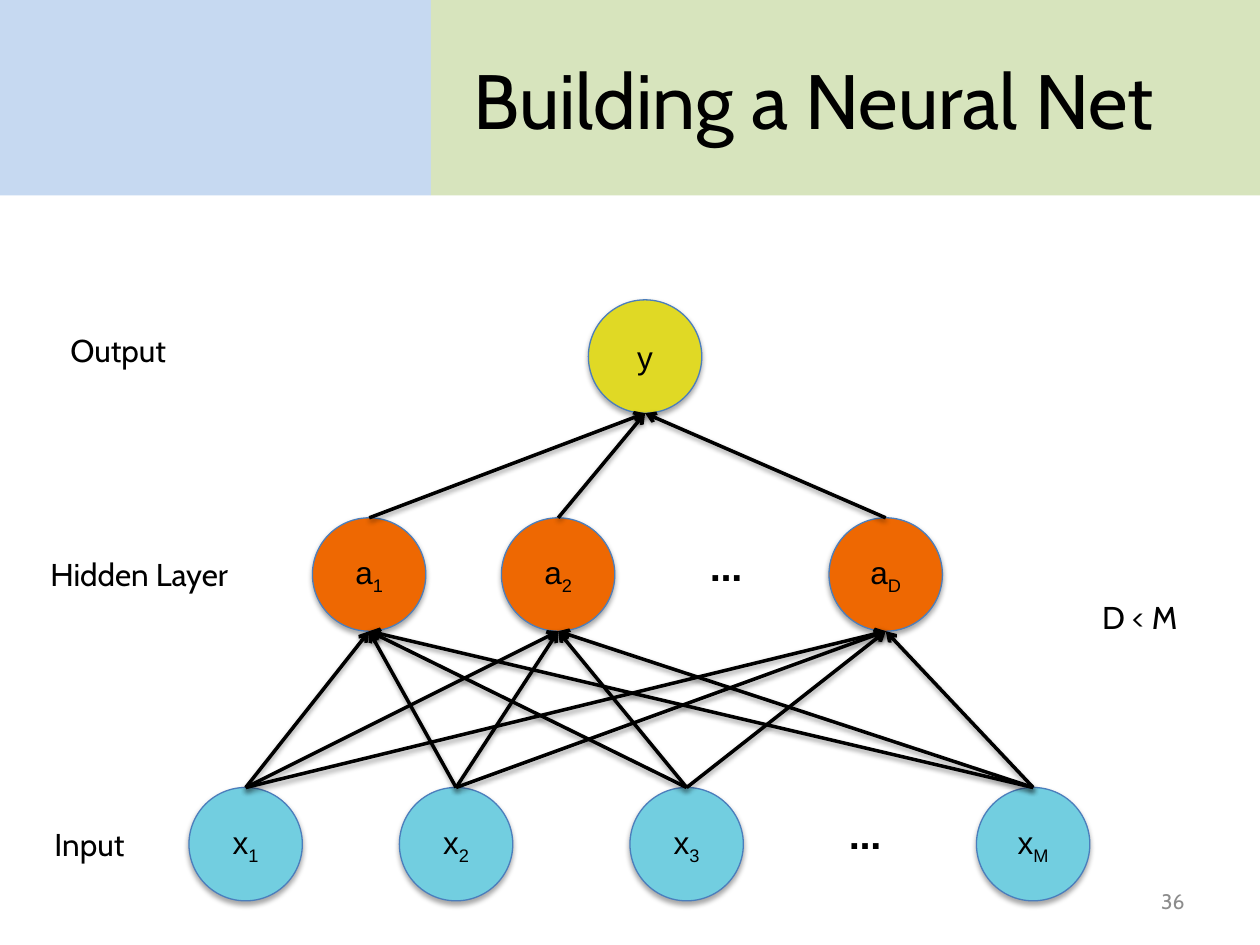
import pptx
import pptx.util
import pptx.dml.color
import pptx.enum.shapes
import pptx.enum.text
import pptx.oxml
from dataclasses import dataclass
from pptx.util import Inches

ALIGN = pptx.enum.text.PP_ALIGN
ANCHOR = pptx.enum.text.MSO_ANCHOR
SHAPE = pptx.enum.shapes.MSO_SHAPE
RGB = pptx.dml.color.RGBColor.from_string
NS = 'xmlns:a="http://schemas.openxmlformats.org/drawingml/2006/main"'


@dataclass(frozen=True)
class Theme:
    blue_band: str = "C6D9F1"
    green_band: str = "D7E4BD"
    input_fill: str = "72CEE0"
    hidden_fill: str = "EE6802"
    output_fill: str = "E0D925"
    outline: str = "4B7EBC"
    ink: str = "000000"
    muted: str = "8C8C8C"
    label_font: str = "Cabin"
    node_font: str = "Arial"
    title_size: int = 44
    dots_size: int = 26
    body_size: int = 18
    number_size: int = 12


theme = Theme()


def set_shadow(properties, opacity, distance):
    """Give a shape's or connector's spPr a soft shadow that falls straight down."""
    for old in properties.findall(pptx.oxml.ns.qn("a:effectLst")):
        properties.remove(old)
    properties.append(pptx.oxml.parse_xml(
        f'<a:effectLst {NS}><a:outerShdw blurRad="{pptx.util.Pt(3.1)}" '
        f'dist="{pptx.util.Pt(distance)}" dir="5400000" rotWithShape="0">'
        f'<a:srgbClr val="{theme.ink}"><a:alpha val="{opacity * 1000}"/></a:srgbClr>'
        f'</a:outerShdw></a:effectLst>'))


def style_text(shape, size, font=theme.label_font, color=theme.ink,
               align=ALIGN.CENTER, anchor=ANCHOR.MIDDLE):
    frame = shape.text_frame
    frame.word_wrap = True
    frame.vertical_anchor = anchor
    for para in frame.paragraphs:
        para.alignment = align
        for span in para.runs:
            span.font.size = pptx.util.Pt(size)
            span.font.name = font
            span.font.color.rgb = RGB(color)


deck = pptx.Presentation()
deck.slide_width, deck.slide_height = Inches(10), Inches(7.5)
page = deck.slides.add_slide(deck.slide_layouts[6])

# Header bands
split, band_height = 3.42, 1.55
for left, width, color in ((0, split, theme.blue_band),
                           (split, 10 - split, theme.green_band)):
    band = page.shapes.add_shape(SHAPE.RECTANGLE, Inches(left), 0,
                                 Inches(width), Inches(band_height))
    band.shadow.inherit = False
    band.fill.solid()
    band.fill.fore_color.rgb = RGB(color)
    band.line.fill.background()

title = page.shapes.add_textbox(Inches(split), Inches(0.16), Inches(6.08), Inches(1.25))
title.text_frame.text = "Building a Neural Net"
style_text(title, theme.title_size)

# Network nodes, one row per layer: top, fill, letter, (subscript, left) pairs
diameter = 0.9
layer_rows = (
    (6.25, theme.input_fill, "x", (("1", 1.5), ("2", 3.17), ("3", 5), ("M", 7.75))),
    (4.11, theme.hidden_fill, "a", (("1", 2.48), ("2", 3.98), ("D", 6.58))),
    (2.38, theme.output_fill, "y", (("", 4.67),)),
)
layers = []
for top, color, letter, places in layer_rows:
    nodes = []
    for subscript, left in places:
        node = page.shapes.add_shape(SHAPE.FLOWCHART_CONNECTOR, Inches(left), Inches(top),
                                     Inches(diameter), Inches(diameter))
        node.fill.solid()
        node.fill.fore_color.rgb = RGB(color)
        node.line.color.rgb = RGB(theme.outline)
        node.line.width = pptx.util.Pt(0.75)
        set_shadow(node._element.spPr, 35, 1.8)
        node.text_frame.text = letter
        if subscript:
            span = node.text_frame.paragraphs[0].add_run()
            span.text = subscript
            span.font._element.set("baseline", "-25000")
        style_text(node, theme.body_size, theme.node_font)
        nodes.append(node)
    layers.append(nodes)

for left, top in ((5.48, 4.2), (6.58, 6.33)):
    dots = page.shapes.add_textbox(Inches(left), Inches(top), Inches(0.58), Inches(0.54))
    dots.text_frame.text = "…"
    style_text(dots, theme.dots_size)
    dots.text_frame.paragraphs[0].runs[0].font.bold = True

# Every node feeds every node of the layer above; the arrowhead is at the upper end
for lower_layer, upper_layer in zip(layers, layers[1:]):
    for upper in upper_layer:
        for lower in lower_layer:
            link = page.shapes.add_connector(
                pptx.enum.shapes.MSO_CONNECTOR.STRAIGHT,
                upper.left + upper.width // 2, upper.top + upper.height,
                lower.left + lower.width // 2, lower.top)
            link.end_connect(lower, 0)
            link.line.color.rgb = RGB(theme.ink)
            link.line.width = pptx.util.Pt(2)
            link.line._get_or_add_ln().append(
                pptx.oxml.parse_xml(f'<a:headEnd {NS} type="arrow"/>'))
            set_shadow(link._element.spPr, 38, 1.6)

# Layer labels and the size condition
for text, left, top, width, align in (
        ("Output", 0.46, 2.58, 1.42, ALIGN.LEFT),
        ("Input", 0, 6.5, 1.42, ALIGN.CENTER),
        ("Hidden Layer", -0.02, 4.36, 2.25, ALIGN.CENTER),
        ("D < M", 7.92, 4.7, 2.25, ALIGN.CENTER)):
    label = page.shapes.add_textbox(Inches(left), Inches(top), Inches(width), Inches(0.4))
    label.text_frame.text = text
    style_text(label, theme.body_size, align=align, anchor=ANCHOR.TOP)

number = page.shapes.add_textbox(Inches(7.17), Inches(6.95), Inches(2.33), Inches(0.4))
number.text_frame.text = "36"
style_text(number, theme.number_size, color=theme.muted, align=ALIGN.RIGHT)

deck.save("out.pptx")
